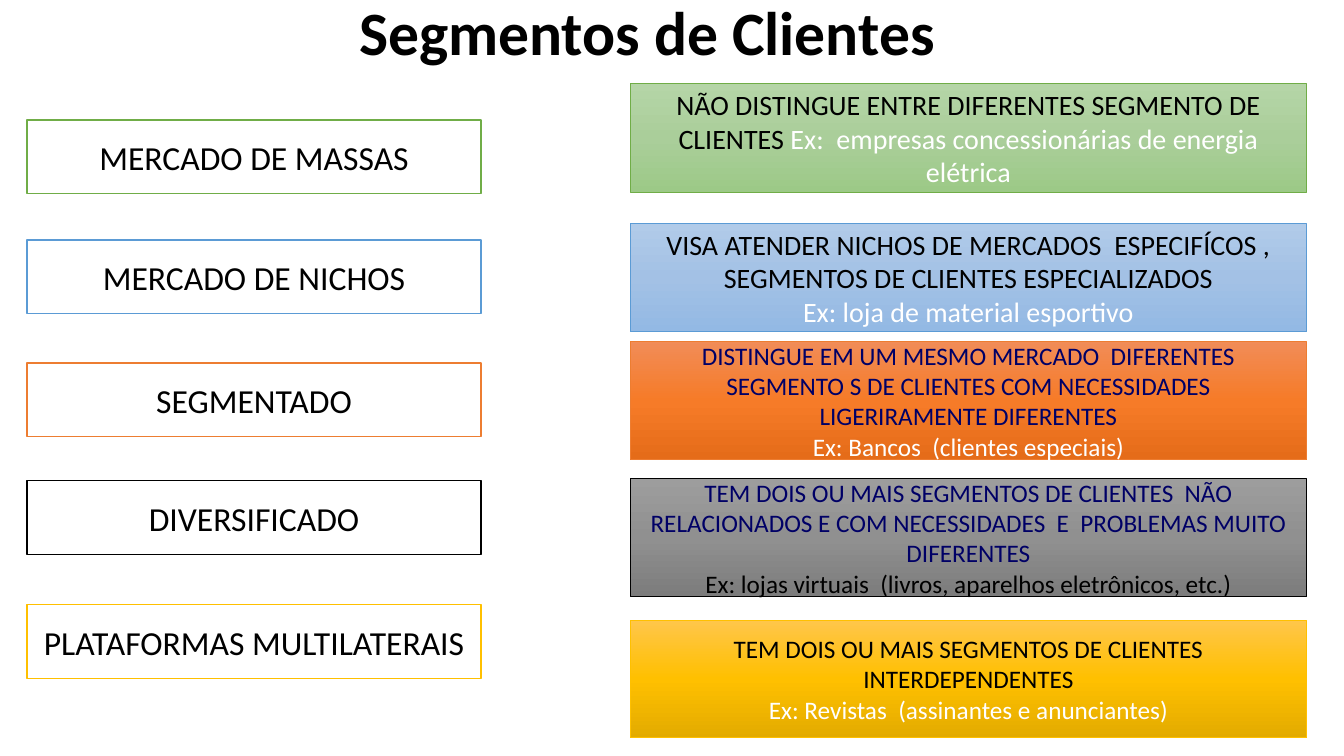
from copy import deepcopy
from dataclasses import dataclass

from pptx import Presentation
from pptx.dml.color import RGBColor
from pptx.enum.shapes import MSO_SHAPE
from pptx.enum.text import MSO_ANCHOR, MSO_AUTO_SIZE, PP_ALIGN
from pptx.oxml.ns import qn
from pptx.util import Inches, Pt


@dataclass(frozen=True)
class Theme:
    font: str = "Calibri"
    black: str = "000000"
    white: str = "FFFFFF"
    navy: str = "000066"
    green: str = "70AD47"
    blue: str = "5B9BD5"
    orange: str = "ED7D31"
    gold: str = "FFC000"
    green_fade: tuple = ("B5D5A7", "AACE9A", "9CC987")
    blue_fade: tuple = ("B1CBE9", "A3C1E5", "93B9E4")
    orange_fade: tuple = ("F18C57", "F67B28", "E56C19")
    gray_fade: tuple = ("9D9D9D", "909090", "7C7C7C")
    gold_fade: tuple = ("FFC64B", "FFC000", "E3AB00")
    title_size: int = 44
    name_size: int = 24
    large_size: int = 20
    small_size: int = 18


@dataclass(frozen=True)
class Segment:
    name: str
    name_top: float
    accent: str
    fade: tuple
    top: float
    height: float
    size: int
    paragraphs: tuple


class SegmentSlide:
    def __init__(self, slide, theme):
        self.slide = slide
        self.theme = theme

    def style_run(self, run, size, color, bold=False):
        run.font.name = self.theme.font
        run.font.size = Pt(size)
        run.font.bold = bold
        run.font.color.rgb = RGBColor.from_string(color)

    def title(self, text):
        heading = self.slide.shapes.title
        heading.left, heading.top = Inches(1.67), Inches(-0.27)
        heading.width, heading.height = Inches(9.5), Inches(1.25)
        frame = heading.text_frame
        frame.text = text
        frame.auto_size = MSO_AUTO_SIZE.NONE
        frame.vertical_anchor = MSO_ANCHOR.MIDDLE
        paragraph = frame.paragraphs[0]
        paragraph.alignment = PP_ALIGN.CENTER
        paragraph.line_spacing = 0.9
        self.style_run(paragraph.runs[0], self.theme.title_size, self.theme.black, bold=True)

    def box(self, left, top, width, height, accent, weight, size, paragraphs):
        box = self.slide.shapes.add_shape(
            MSO_SHAPE.RECTANGLE, Inches(left), Inches(top), Inches(width), Inches(height))
        box.shadow.inherit = False
        box.line.color.rgb = RGBColor.from_string(accent)
        box.line.width = Pt(weight)
        frame = box.text_frame
        frame.word_wrap = True
        frame.vertical_anchor = MSO_ANCHOR.MIDDLE
        for index, pieces in enumerate(paragraphs):
            paragraph = frame.add_paragraph() if index else frame.paragraphs[0]
            paragraph.alignment = PP_ALIGN.CENTER
            for text, color in pieces:
                run = paragraph.add_run()
                run.text = text
                self.style_run(run, size, color)
        return box

    def fade(self, box, colors):
        box.fill.gradient()
        box.fill.gradient_angle = 270
        stop_list = box._element.spPr.find(qn("a:gradFill")).find(qn("a:gsLst"))
        stop_list.append(deepcopy(stop_list[0]))
        for index, (stop, color) in enumerate(zip(box.fill.gradient_stops, colors)):
            stop.position = index / (len(colors) - 1)
            stop.color.rgb = RGBColor.from_string(color)

    def segment_name(self, segment):
        box = self.box(0.27, segment.name_top, 4.5, 0.73, segment.accent, 1,
                       self.theme.name_size, [[(segment.name, self.theme.black)]])
        box.fill.solid()
        box.fill.fore_color.rgb = RGBColor.from_string(self.theme.white)

    def segment_description(self, segment):
        box = self.box(6.25, segment.top, 6.71, segment.height, segment.accent, 0.5,
                       segment.size, segment.paragraphs)
        self.fade(box, segment.fade)


def customer_segments(theme):
    black, white, navy = theme.black, theme.white, theme.navy
    large, small = theme.large_size, theme.small_size
    return [
        Segment("MERCADO DE MASSAS", 1.19, theme.green, theme.green_fade, 0.83, 1.08, large, (
            [("NÃO DISTINGUE ENTRE DIFERENTES SEGMENTO DE CLIENTES ", black),
             ("Ex:  empresas concessionárias de energia elétrica", white)],)),
        Segment("MERCADO DE NICHOS", 2.38, theme.blue, theme.blue_fade, 2.22, 1.07, large, (
            [("VISA ATENDER NICHOS DE MERCADOS  ESPECIFÍCOS , "
              "SEGMENTOS DE CLIENTES ESPECIALIZADOS", black)],
            [("Ex: loja de material esportivo", white)])),
        Segment("SEGMENTADO", 3.6, theme.orange, theme.orange_fade, 3.39, 1.17, small, (
            [("DISTINGUE EM UM MESMO MERCADO  DIFERENTES SEGMENTO S DE CLIENTES "
              "COM NECESSIDADES LIGERIRAMENTE DIFERENTES", navy)],
            [("Ex: Bancos  (clientes especiais)", white)])),
        Segment("DIVERSIFICADO", 4.77, black, theme.gray_fade, 4.75, 1.17, small, (
            [("TEM DOIS OU MAIS SEGMENTOS DE CLIENTES  NÃO RELACIONADOS "
              "E COM NECESSIDADES  E  PROBLEMAS MUITO DIFERENTES", navy)],
            [("Ex: lojas virtuais  (livros, aparelhos eletrônicos, etc.)", black)])),
        Segment("PLATAFORMAS MULTILATERAIS", 6, theme.gold, theme.gold_fade, 6.15, 1.17, small, (
            [("TEM DOIS OU MAIS SEGMENTOS DE CLIENTES INTERDEPENDENTES", black)],
            [("Ex: Revistas  (assinantes e anunciantes)", white)])),
    ]


def main():
    theme = Theme()
    presentation = Presentation()
    presentation.slide_width = Inches(13.33)
    presentation.slide_height = Inches(7.5)
    title_only = presentation.slide_layouts.get_by_name("Title Only")
    page = SegmentSlide(presentation.slides.add_slide(title_only), theme)
    page.title("Segmentos de Clientes")
    segments = customer_segments(theme)
    for segment in segments:
        page.segment_name(segment)
    for segment in segments:
        page.segment_description(segment)
    presentation.save("out.pptx")


if __name__ == "__main__":
    main()
